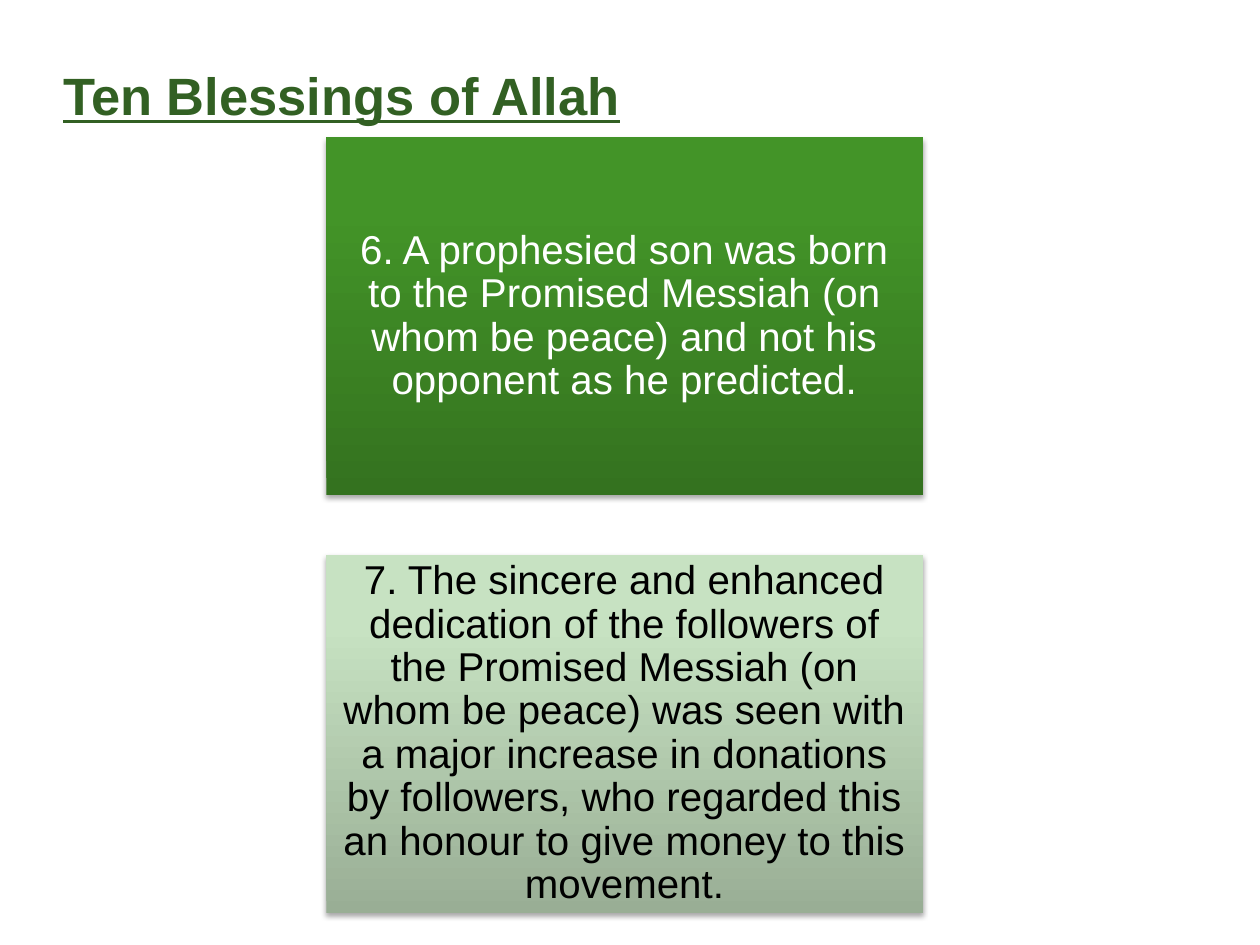
import copy

import pptx
import pptx.dml.color
import pptx.enum.shapes
import pptx.enum.text
import pptx.oxml
import pptx.oxml.ns
import pptx.util

Pt = pptx.util.Pt
COLORS = {"title": "326023", "white": "FFFFFF", "black": "000000"}
GREEN = {0: "34721F", 0.8: "439428", 1: "429726"}
PALE = {0: "99AE95", 0.8: "C7E2C2", 1: "C8E3C2"}
BLESSINGS = [
    ("6. A prophesied son was born to the Promised Messiah (on whom be peace) "
     "and not his opponent as he predicted.", GREEN, "white"),
    ("7. The sincere and enhanced dedication of the followers of the Promised "
     "Messiah (on whom be peace) was seen with a major increase in donations by "
     "followers, who regarded this an honour to give money to this movement.",
     PALE, "black"),
]


def rgb(value):
    return pptx.dml.color.RGBColor.from_string(value)


def set_text(shape, text, size, color, alignment, anchor, inset):
    frame = shape.text_frame
    frame.word_wrap = True
    frame.auto_size = pptx.enum.text.MSO_AUTO_SIZE.NONE
    frame.vertical_anchor = anchor
    frame.margin_left = frame.margin_right = Pt(inset)
    frame.margin_top = frame.margin_bottom = Pt(inset)
    frame.text = text
    para = frame.paragraphs[0]
    para.alignment = alignment
    para.font.name = "Arial"
    para.font.size = Pt(size)
    para.font.color.rgb = rgb(COLORS[color])
    return para


def add_title(page, left, top, width, height):
    title = page.shapes.title
    title.left, title.top = Pt(left), Pt(top)
    title.width, title.height = Pt(width), Pt(height)
    para = set_text(title, "Ten Blessings of Allah", 30, "title",
                    pptx.enum.text.PP_ALIGN.LEFT, pptx.enum.text.MSO_ANCHOR.TOP, 0)
    para.font.bold = True
    para.font.underline = True


def fill_gradient(shape, stops):
    shape.fill.gradient()
    shape.fill.gradient_angle = 90
    stop_list = shape.fill._fill._gradFill.gsLst
    stop_list.append(copy.deepcopy(stop_list[-1]))
    for stop, (position, color) in zip(shape.fill.gradient_stops, stops.items()):
        stop.position = position
        stop.color.rgb = rgb(color)


def add_shadow(shape):
    shape.shadow.inherit = False
    effects = shape._element.spPr.find(pptx.oxml.ns.qn("a:effectLst"))
    effects.append(pptx.oxml.parse_xml(
        f'<a:outerShdw {pptx.oxml.ns.nsdecls("a")} blurRad="{Pt(3.1)}" '
        f'dist="{Pt(1.8)}" dir="5400000" rotWithShape="0">'
        f'<a:srgbClr val="{COLORS["black"]}"><a:alpha val="35000"/></a:srgbClr>'
        '</a:outerShdw>'))


def add_blessings(page, left, top, width, height, gap):
    box_height = (height - gap * (len(BLESSINGS) - 1)) / len(BLESSINGS)
    for index, (text, stops, color) in enumerate(BLESSINGS):
        box = page.shapes.add_shape(
            pptx.enum.shapes.MSO_SHAPE.RECTANGLE, Pt(left),
            Pt(top + index * (box_height + gap)), Pt(width), Pt(box_height))
        fill_gradient(box, stops)
        box.line.fill.background()
        add_shadow(box)
        para = set_text(box, text, 23, color, pptx.enum.text.PP_ALIGN.CENTER,
                        pptx.enum.text.MSO_ANCHOR.MIDDLE, 7.2)
        para.line_spacing = 0.9


def main():
    deck = pptx.Presentation()
    deck.slide_width, deck.slide_height = Pt(720), Pt(540)
    page = deck.slides.add_slide(deck.slide_layouts.get_by_name("Title Only"))
    page.background.fill.solid()
    page.background.fill.fore_color.rgb = rgb(COLORS["white"])
    add_title(page, 36, 36, 648, 72)
    add_blessings(page, 186.5, 78.5, 341, 443, 34)
    deck.save("out.pptx")


if __name__ == "__main__":
    main()
